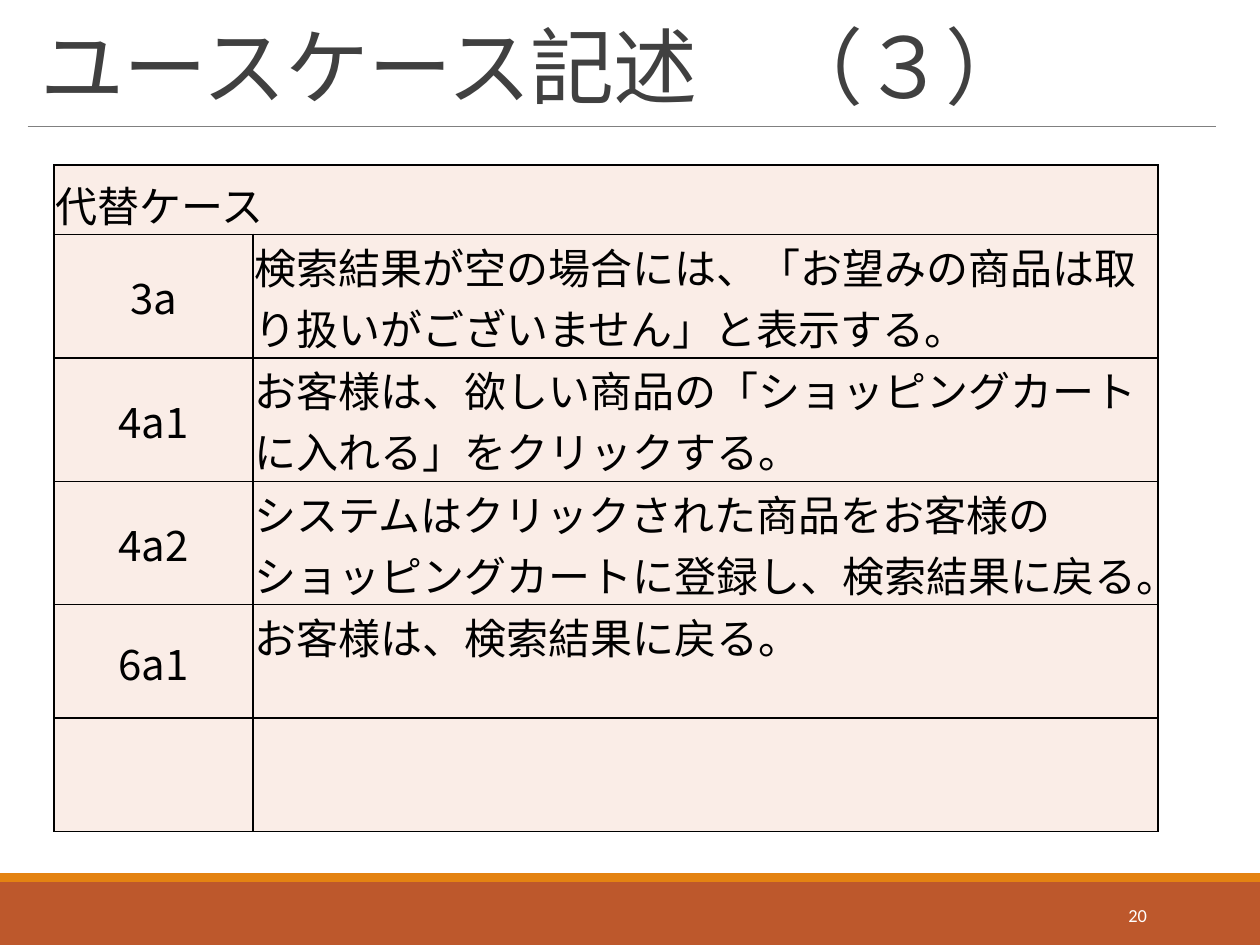
from lxml.etree import SubElement
from pptx import Presentation
from pptx.dml.color import RGBColor
from pptx.enum.shapes import MSO_CONNECTOR, MSO_SHAPE
from pptx.enum.text import MSO_ANCHOR, MSO_AUTO_SIZE, PP_ALIGN
from pptx.oxml.ns import qn
from pptx.util import Inches, Pt

WHITE = RGBColor(0xFF, 0xFF, 0xFF)
BLACK = RGBColor(0, 0, 0)
DARK = RGBColor(0x40, 0x40, 0x40)
GRAY = RGBColor(0x80, 0x80, 0x80)
RUST = RGBColor(0xBD, 0x58, 0x2C)
AMBER = RGBColor(0xE4, 0x83, 0x12)
CREAM = RGBColor(0xFA, 0xED, 0xE7)
LATIN, KANJI = "Calibri", "Noto Sans CJK JP"

HEAD = "代替ケース"
STEPS = [
    ("3a", "検索結果が空の場合には、「お望みの商品は取り扱いがございません」と表示する。"),
    ("4a1", "お客様は、欲しい商品の「ショッピングカートに入れる」をクリックする。"),
    ("4a2", "システムはクリックされた商品をお客様のショッピングカートに登録し、検索結果に戻る。"),
    ("6a1", "お客様は、検索結果に戻る。"),
    ("", ""),
]
# Shares of the table height: heading, three two-line rows, two short rows
ROWS = [0.55, 0.98, 0.98, 0.98, 0.9, 0.9]


def style(para, name, size, color, align=PP_ALIGN.LEFT):
    para.alignment = align
    font = para.font
    font.name, font.size, font.color.rgb = name, Pt(size), color


def bar(slide, box, color):
    shape = slide.shapes.add_shape(MSO_SHAPE.RECTANGLE, *map(Inches, box))
    shape.shadow.inherit = False
    shape.fill.solid()
    shape.fill.fore_color.rgb = color
    shape.line.fill.background()


def footer(slide, box, number):
    left, top, width, height = box
    edge = 0.07
    bar(slide, (left, top + edge, width, height - edge), RUST)
    bar(slide, (left, top, width, edge), AMBER)
    # Page number
    note = slide.shapes.add_textbox(
        Inches(left + 0.81 * width), Inches(top + 0.13),
        Inches(0.11 * width), Inches(0.4))
    frame = note.text_frame
    frame.word_wrap = True
    frame.vertical_anchor = MSO_ANCHOR.MIDDLE
    frame.text = number
    style(frame.paragraphs[0], LATIN, 10.5, WHITE, PP_ALIGN.RIGHT)


def header(slide, box, text):
    left, top, width, height = box
    title = slide.shapes.title
    title.left, title.top, title.width, title.height = map(Inches, box)
    frame = title.text_frame
    frame.auto_size = MSO_AUTO_SIZE.NONE
    frame.vertical_anchor = MSO_ANCHOR.BOTTOM
    frame.text = text
    para = frame.paragraphs[0]
    para.line_spacing = 0.85
    style(para, LATIN, 48, DARK)
    para.runs[0].font._element.set("spc", "-50")
    # Rule under the title
    level = Inches(top + height + 0.03)
    rule = slide.shapes.add_connector(
        MSO_CONNECTOR.STRAIGHT, Inches(left), level, Inches(left + width), level)
    rule.line.color.rgb = GRAY
    rule.line.width = Pt(0.5)
    SubElement(rule._element.spPr, qn("a:effectLst"))


def frame_cell(cell):
    props = cell._tc.get_or_add_tcPr()
    for side in ("lnL", "lnR", "lnT", "lnB"):
        line = SubElement(props, qn(f"a:{side}"), w=str(Pt(1)))
        fill = SubElement(line, qn("a:solidFill"))
        SubElement(fill, qn("a:srgbClr"), val=str(BLACK))


def fill_cell(cell, text, anchor, align=PP_ALIGN.LEFT):
    cell.margin_left = cell.margin_right = cell.margin_top = Inches(0.01)
    cell.margin_bottom = 0
    cell.vertical_anchor = anchor
    frame_cell(cell)
    cell.fill.solid()
    cell.fill.fore_color.rgb = CREAM
    cell.text = text
    para = cell.text_frame.paragraphs[0]
    style(para, KANJI, 24, BLACK, align)
    for run in para.runs:
        SubElement(run.font._element, qn("a:ea"), typeface=KANJI)


def case_table(slide, box):
    width, height = box[2:]
    table = slide.shapes.add_table(len(ROWS), 2, *map(Inches, box)).table
    table.first_row = table.horz_banding = False
    first = 0.18 * width
    table.columns[0].width = Inches(first)
    table.columns[1].width = Inches(width - first)
    for row, share in zip(table.rows, ROWS):
        row.height = Inches(height * share / sum(ROWS))
    # Heading row spans both columns
    table.cell(0, 0).merge(table.cell(0, 1))
    for col, text in enumerate((HEAD, "")):
        fill_cell(table.cell(0, col), text, MSO_ANCHOR.BOTTOM)
    # Steps
    for i, (mark, text) in enumerate(STEPS, 1):
        fill_cell(table.cell(i, 0), mark, MSO_ANCHOR.MIDDLE, PP_ALIGN.CENTER)
        fill_cell(table.cell(i, 1), text, MSO_ANCHOR.TOP)


def main():
    deck = Presentation()
    deck.slide_width, deck.slide_height = Inches(10), Inches(7.5)
    slide = deck.slides.add_slide(deck.slide_layouts[5])
    footer(slide, (0, 6.93, 10, 0.57), "20")
    header(slide, (0.22, 0.09, 9.43, 0.88), "ユースケース記述　（３）")
    case_table(slide, (0.43, 1.31, 8.76, 5.29))
    deck.save("out.pptx")


if __name__ == "__main__":
    main()
